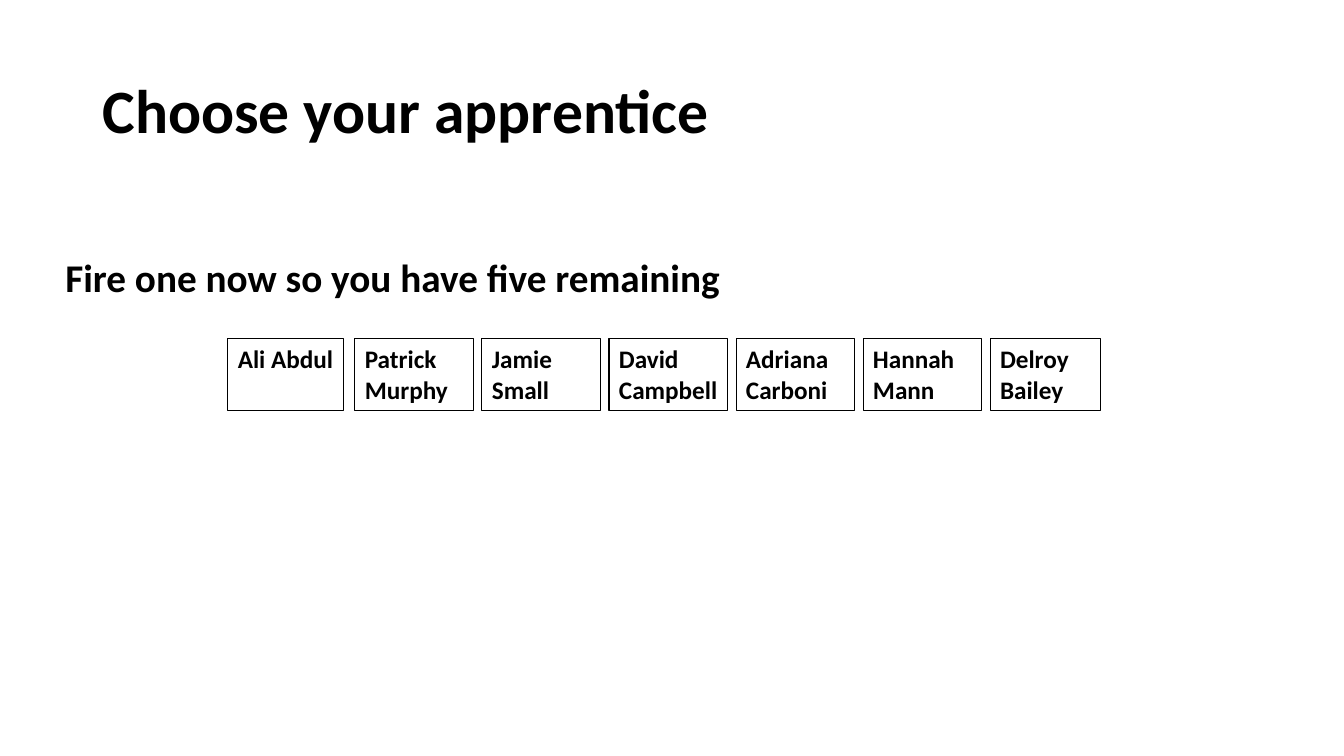
import pptx
import pptx.util
import pptx.dml.color
import pptx.enum.shapes
import pptx.enum.text
from pptx.util import Inches

Align = pptx.enum.text.PP_ALIGN
Anchor = pptx.enum.text.MSO_ANCHOR


def color(code):
    return pptx.dml.color.RGBColor.from_string(code)


class Page:
    face = "Calibri"
    ink = "000000"

    def __init__(self, slide):
        self.slide = slide

    def style(self, shape, text, size, anchor, space=1.0):
        frame = shape.text_frame
        frame.word_wrap = True
        frame.vertical_anchor = anchor
        frame.text = text
        for para in frame.paragraphs:
            para.alignment = Align.LEFT
            para.line_spacing = space
            para.font.name = self.face
            para.font.size = pptx.util.Pt(size)
            para.font.bold = True
            para.font.color.rgb = color(self.ink)
        return frame

    def label(self, text, left, top, width, height, size, anchor):
        box = self.slide.shapes.add_textbox(
            Inches(left), Inches(top), Inches(width), Inches(height))
        self.style(box, text, size, anchor, 0.9)

    def card(self, text, left, top, width, height):
        box = self.slide.shapes.add_shape(
            pptx.enum.shapes.MSO_SHAPE.RECTANGLE,
            Inches(left), Inches(top), Inches(width), Inches(height))
        box.shadow.inherit = False
        box.fill.background()
        box.line.color.rgb = color(self.ink)
        box.line.width = pptx.util.Pt(0.75)
        frame = self.style(box, text, 18, Anchor.TOP)
        frame.margin_right = Inches(0.05)


def main():
    deck = pptx.Presentation()
    deck.slide_width = Inches(13.33)
    deck.slide_height = Inches(7.5)
    page = Page(deck.slides.add_slide(deck.slide_layouts[6]))

    page.label("Choose your apprentice", 0.92, 0.4, 11.5, 1.45, 44, Anchor.MIDDLE)
    page.label("Fire one now so you have five remaining",
               0.55, 2.52, 11.87, 0.53, 28, Anchor.TOP)

    names = [
        ("Ali Abdul", 1.15),
        ("Patrick Murphy", 1.18),
        ("Jamie Small", 1.18),
        ("David Campbell", 1.18),
        ("Adriana Carboni", 1.18),
        ("Hannah Mann", 1.18),
        ("Delroy\nBailey", 1.1),
    ]
    for i, (name, width) in enumerate(names):
        page.card(name, 2.26 + 1.26 * i, 3.36, width, 0.71)

    deck.save("out.pptx")


if __name__ == "__main__":
    main()
